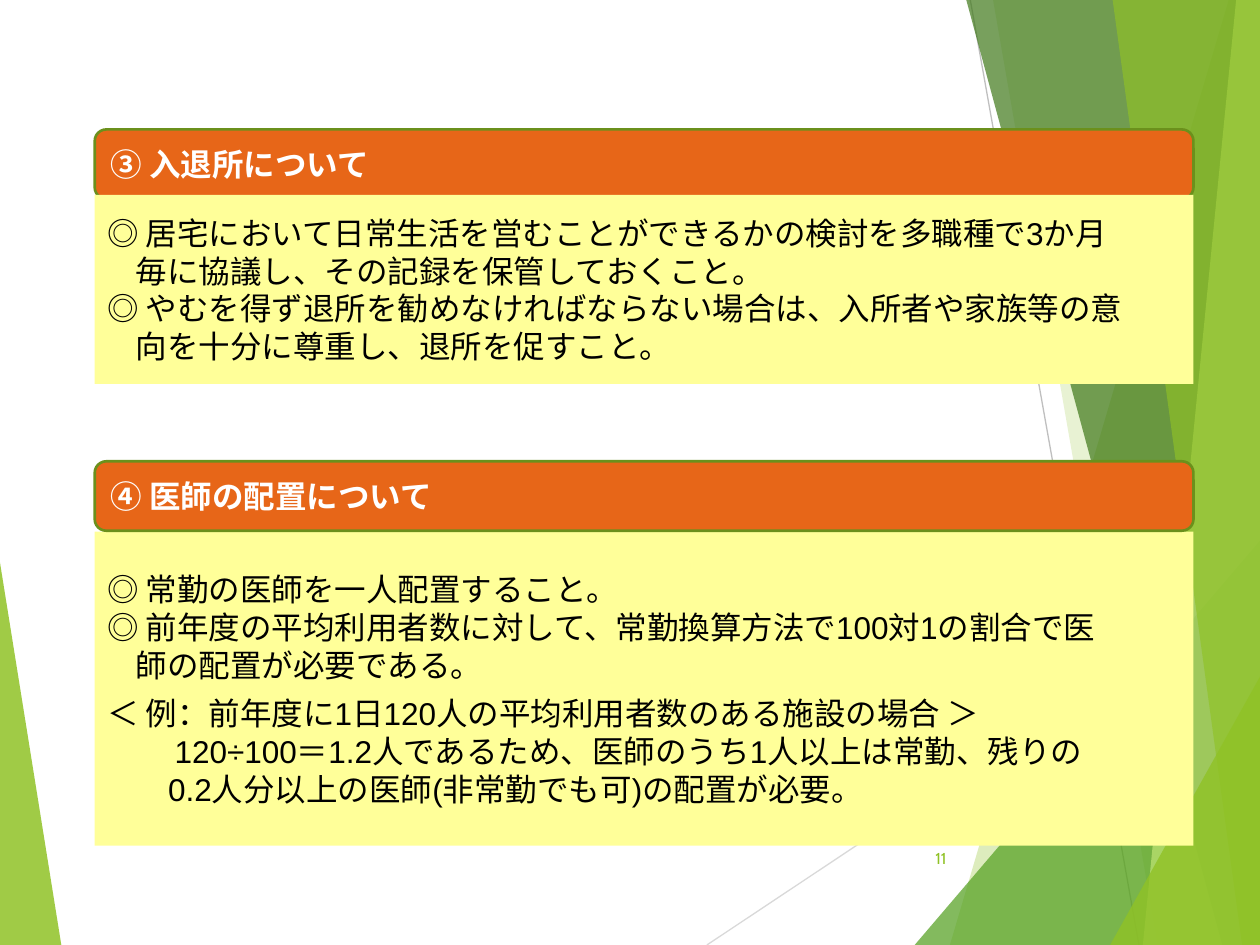
from lxml import etree
from pptx import Presentation
from pptx.dml.color import RGBColor
from pptx.enum.shapes import MSO_CONNECTOR as Link, MSO_SHAPE as Preset
from pptx.enum.text import MSO_ANCHOR as Anchor, PP_ALIGN as Align
from pptx.oxml.ns import qn
from pptx.util import Cm, Pt

LIME = RGBColor(0x90, 0xC2, 0x26)
GREEN = RGBColor(0x54, 0xA0, 0x21)
FOREST = RGBColor(0x3F, 0x78, 0x19)
PALE_LIME = RGBColor(0xC0, 0xE4, 0x74)
LIGHT_GRAY = RGBColor(0xD9, 0xD9, 0xD9)
GRAY = RGBColor(0xBF, 0xBF, 0xBF)
ORANGE = RGBColor(0xE7, 0x66, 0x18)
OLIVE = RGBColor(0x6B, 0x90, 0x1C)
YELLOW = RGBColor(0xFF, 0xFF, 0x99)
WHITE = RGBColor(0xFF, 0xFF, 0xFF)
BLACK = RGBColor(0, 0, 0)

HEADING_FONT = {"name": "Cabin", "size": Pt(18), "bold": True}
BODY_FONT = {"name": "Arial", "size": Pt(18)}
NUMBER_FONT = {"name": "Cabin", "size": Pt(9)}

WIDTH, HEIGHT, EDGE = 25.4, 19.05, 25.43

prs = Presentation()
prs.slide_width, prs.slide_height = Cm(WIDTH), Cm(HEIGHT)
slide = prs.slides.add_slide(prs.slide_layouts[6])
shapes = slide.shapes


def add_facet(points, color, opacity):
    corners = [(Cm(x), Cm(y)) for x, y in points]
    builder = shapes.build_freeform(*corners[0])
    builder.add_line_segments(corners[1:], close=True)
    facet = builder.convert_to_shape()
    facet.shadow.inherit = False
    facet.fill.solid()
    facet.fill.fore_color.rgb = color
    facet.line.fill.background()
    tint = facet.fill._xPr.find(".//" + qn("a:srgbClr"))
    etree.SubElement(tint, qn("a:alpha")).set("val", str(opacity * 1000))


def write_lines(frame, lines, font_format, color, align=Align.LEFT):
    frame.word_wrap = True
    frame.vertical_anchor = Anchor.MIDDLE
    for index, (wording, indent, space_before) in enumerate(lines):
        line = frame.paragraphs[0] if index == 0 else frame.add_paragraph()
        line.alignment = align
        line.space_before = Pt(space_before)
        line._p.get_or_add_pPr().set("marL", str(Cm(indent)))
        run = line.add_run()
        run.text = wording
        for key, value in font_format.items():
            setattr(run.font, key, value)
        run.font.color.rgb = color


add_facet([(-0.03, 11.15), (1.24, 19.07), (-0.03, HEIGHT)], LIME, 85)

for x1, y1, x2, y2, color in [
    (14.25, HEIGHT, EDGE, 11.61, LIGHT_GRAY),
    (19.56, 0, 22.96, HEIGHT, GRAY),
]:
    ray = shapes.add_connector(Link.STRAIGHT, Cm(x1), Cm(y1), Cm(x2), Cm(y2))
    ray.line.color.rgb = color
    ray.line.width = Pt(0.75)
    etree.SubElement(ray._element.spPr, qn("a:effectLst"))

for top_x, top_y, bottom_x, color, opacity in [
    (24.77, 0, 19.15, LIME, 30),
    (20.02, 0, 23.34, LIME, 20),
    (25.4, 10.9, 18.44, GREEN, 72),
    (19.48, 0, 24.64, FOREST, 70),
    (24.92, 0, 23.04, PALE_LIME, 70),
    (22.43, 0, 25.04, LIME, 65),
    (EDGE, 13.59, 22.38, LIME, 80),
]:
    corners = [(top_x, top_y), (bottom_x, HEIGHT), (EDGE, HEIGHT), (EDGE, top_y)]
    add_facet(corners, color, opacity)

page_number = shapes.add_textbox(Cm(17.91), Cm(16.79), Cm(1.42), Cm(1.02))
write_lines(page_number.text_frame, [("11", 0, 0)], NUMBER_FONT, LIME, Align.RIGHT)

HANGING = 0.58
admission_rules = [
    ("◎ 居宅において日常生活を営むことができるかの検討を多職種で3か月", 0, 0),
    ("毎に協議し、その記録を保管しておくこと。", HANGING, 0),
    ("◎ やむを得ず退所を勧めなければならない場合は、入所者や家族等の意", 0, 0),
    ("向を十分に尊重し、退所を促すこと。", HANGING, 0),
]
doctor_rules = [
    ("◎ 常勤の医師を一人配置すること。", 0, 0),
    ("◎ 前年度の平均利用者数に対して、常勤換算方法で100対1の割合で医", 0, 0),
    ("師の配置が必要である。", HANGING, 0),
    ("＜ 例：前年度に1日120人の平均利用者数のある施設の場合 ＞", 0, 6),
    ("120÷100＝1.2人であるため、医師のうち1人以上は常勤、残りの", 1.36, 0),
    ("0.2人分以上の医師(非常勤でも可)の配置が必要。", 1.23, 0),
]
doctor_heading = [("④ 医師の配置について", 0, 0)]
admission_heading = [("③ 入退所について", 0, 0)]

for top, height, lines, is_heading in [
    (10.72, 6.33, doctor_rules, False),
    (9.3, 1.4, doctor_heading, True),
    (2.61, 1.4, admission_heading, True),
    (3.93, 3.81, admission_rules, False),
]:
    outline = Preset.ROUNDED_RECTANGLE if is_heading else Preset.RECTANGLE
    panel = shapes.add_shape(outline, Cm(1.91), Cm(top), Cm(22.15), Cm(height))
    panel.shadow.inherit = False
    panel.fill.solid()
    panel.fill.fore_color.rgb = ORANGE if is_heading else YELLOW
    if is_heading:
        panel.line.color.rgb = OLIVE
        panel.line.width = Pt(1.5)
        write_lines(panel.text_frame, lines, HEADING_FONT, WHITE)
    else:
        panel.line.fill.background()
        write_lines(panel.text_frame, lines, BODY_FONT, BLACK)

prs.save("out.pptx")
